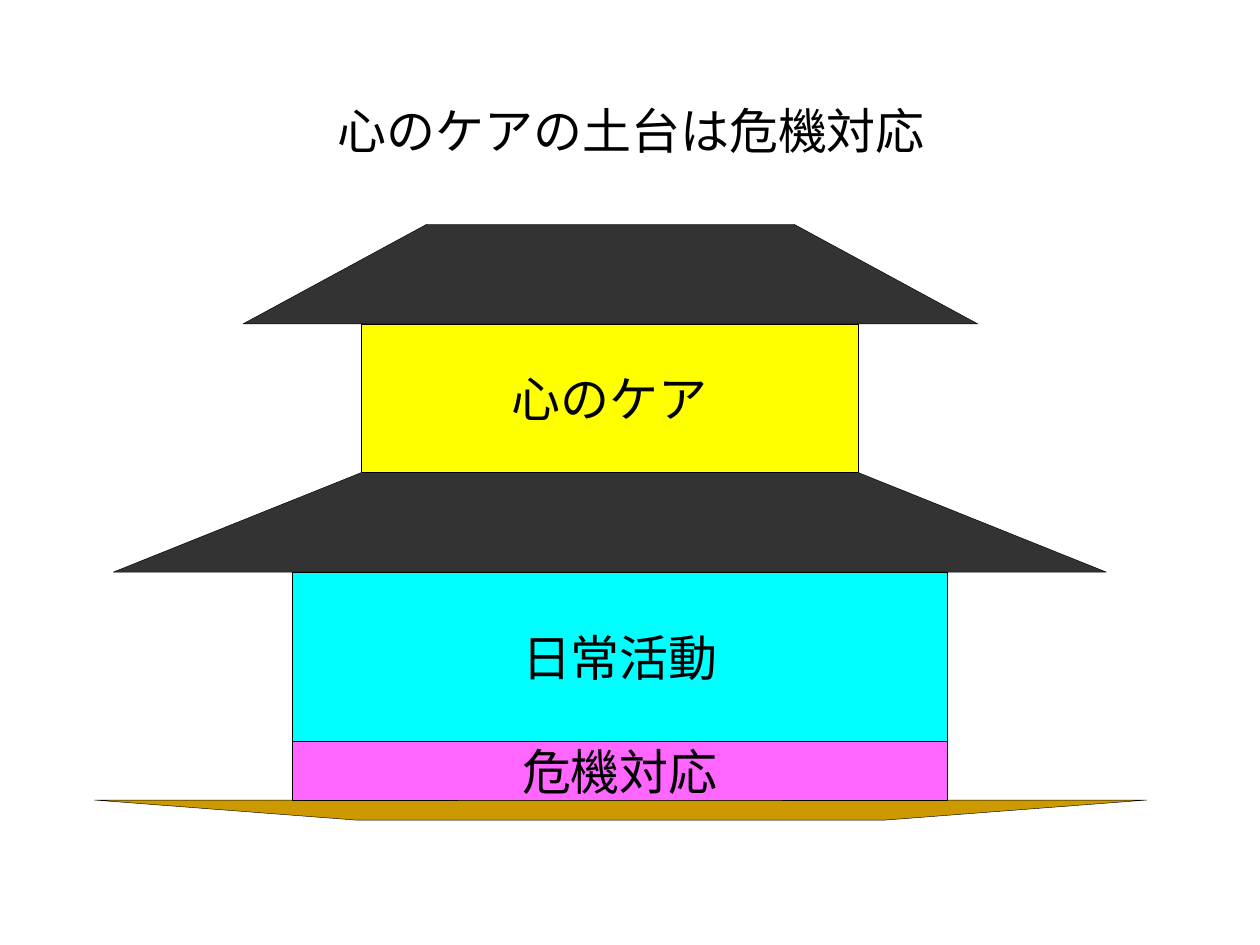
from dataclasses import dataclass

from lxml.etree import SubElement
from pptx import Presentation
from pptx.dml.color import RGBColor
from pptx.enum.shapes import MSO_SHAPE
from pptx.enum.text import MSO_ANCHOR, PP_ALIGN
from pptx.oxml.ns import qn
from pptx.util import Inches, Pt


@dataclass(frozen=True)
class Theme:
    ink: str = "000000"
    roof: str = "333333"
    care: str = "FFFF00"
    daily: str = "00FFFF"
    crisis: str = "FF66FF"
    ground: str = "CC9900"
    title_font: str = "Arial"
    label_font: str = "Noto Sans CJK JP"
    text_size: int = 28
    line_width: float = 0.25


THEME = Theme()


def write_text(text_frame, text, font_name):
    text_frame.text = text
    text_frame.vertical_anchor = MSO_ANCHOR.MIDDLE
    paragraph = text_frame.paragraphs[0]
    paragraph.alignment = PP_ALIGN.CENTER
    font = paragraph.runs[0].font
    font.size = Pt(THEME.text_size)
    font.name = font_name
    font.color.rgb = RGBColor.from_string(THEME.ink)
    east_asian = SubElement(paragraph.runs[0]._r.get_or_add_rPr(), qn("a:ea"))
    east_asian.set("typeface", THEME.label_font)


def paint(shape, color):
    shape.shadow.inherit = False
    shape.fill.solid()
    shape.fill.fore_color.rgb = RGBColor.from_string(color)
    shape.line.color.rgb = RGBColor.from_string(THEME.ink)
    shape.line.width = Pt(THEME.line_width)


def add_title(slide, text):
    title = slide.shapes.title
    title.left, title.top = Inches(0.51), Inches(0.76)
    title.width, title.height = Inches(9), Inches(0.55)
    write_text(title.text_frame, text, THEME.title_font)


def add_storey(slide, text, left, top, width, height, color):
    storey = slide.shapes.add_shape(
        MSO_SHAPE.RECTANGLE, Inches(left), Inches(top), Inches(width), Inches(height))
    paint(storey, color)
    text_frame = storey.text_frame
    text_frame.word_wrap = False
    text_frame.margin_left = text_frame.margin_right = Inches(0.04)
    text_frame.margin_top = text_frame.margin_bottom = Inches(0.04)
    write_text(text_frame, text, THEME.label_font)


def add_trapezoid(slide, left, width, long_y, short_y, color):
    """Draw a trapezoid whose short side is half as wide as its long side."""
    corners = [(left, long_y), (left + width / 4, short_y),
               (left + width * 3 / 4, short_y), (left + width, long_y)]
    points = [(Inches(x), Inches(y)) for x, y in corners]
    builder = slide.shapes.build_freeform(*points[0])
    builder.add_line_segments(points[1:], close=True)
    paint(builder.convert_to_shape(), color)


def main():
    presentation = Presentation()
    presentation.slide_width, presentation.slide_height = Inches(10), Inches(7.5)
    slide = presentation.slides.add_slide(presentation.slide_layouts[5])

    add_title(slide, "心のケアの土台は危機対応")
    add_trapezoid(slide, 0.75, 8.35, 6.35, 6.51, THEME.ground)
    add_storey(slide, "危機対応", 2.32, 5.88, 5.2, 0.47, THEME.crisis)
    add_storey(slide, "日常活動", 2.32, 4.54, 5.2, 1.34, THEME.daily)
    add_trapezoid(slide, 0.9, 7.88, 4.54, 3.75, THEME.roof)
    add_storey(slide, "心のケア", 2.87, 2.57, 3.94, 1.18, THEME.care)
    add_trapezoid(slide, 1.93, 5.83, 2.57, 1.78, THEME.roof)

    presentation.save("out.pptx")


if __name__ == "__main__":
    main()
